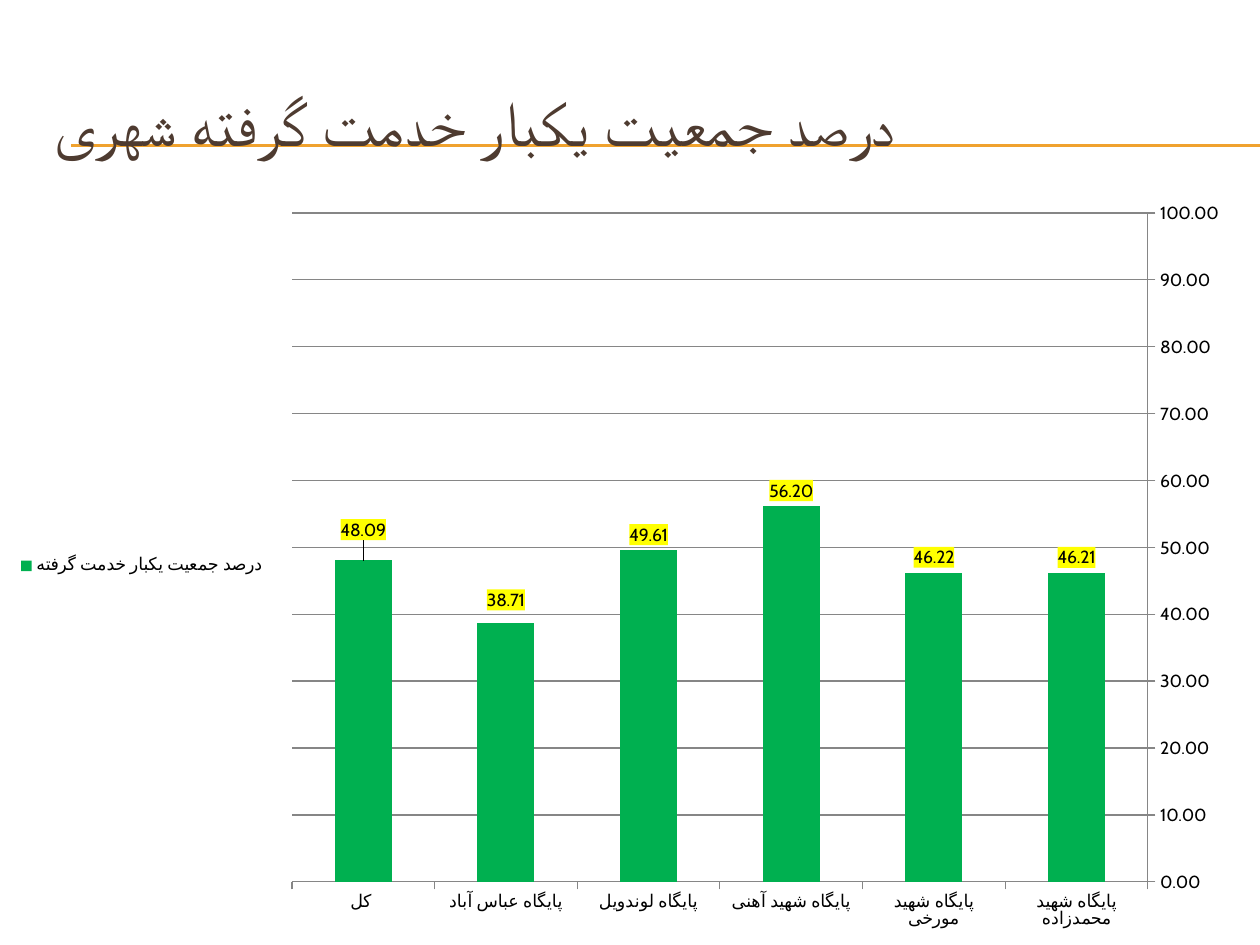
from lxml import etree
from pptx import Presentation
from pptx import util as u
from pptx.chart.data import CategoryChartData
from pptx.dml.color import RGBColor
from pptx.enum import chart as charts, shapes, text
from pptx.oxml import parse_xml
from pptx.oxml.ns import nsdecls, qn

PX = 914400 // 126
FONT = "Cabin"
TITLE = "درصد جمعیت یکبار خدمت گرفته شهری"
SERIES = "درصد جمعیت یکبار خدمت گرفته"
VALUES = [
    ("پایگاه شهید محمدزاده", 46.21),
    ("پایگاه شهید مورخی", 46.22),
    ("پایگاه شهید آهنی", 56.20),
    ("پایگاه لوندویل", 49.61),
    ("پایگاه عباس آباد", 38.71),
    ("کل ", 48.09),
]
RAISED_LABELS = {4: -0.01, 5: -0.02}  # point index: share of chart height
TITLE_BOX = (42, 63, 1197, 116)
CHART_BOX = (5, 188, 1239, 756)
PLOT_BOX = (292, 213, 856, 669)
RULES_Y = (145, 146)
RULE_LEFT, PAGE_WIDTH, PAGE_HEIGHT = 71, 1260, 945


def px(*lengths):
    return [u.Emu(length * PX) for length in lengths]


def color(value):
    return RGBColor.from_string(value)


def manual_layout(**settings):
    parts = "".join(f'<c:{name} val="{value}"/>' for name, value in settings.items())
    return parse_xml(f'<c:layout {nsdecls("c")}><c:manualLayout>{parts}</c:manualLayout></c:layout>')


def style_font(font, size, value):
    font.name, font.size, font.bold = FONT, u.Pt(size), False
    font.color.rgb = color(value)


def add_rule(page, y):
    left, top, right = px(RULE_LEFT, y, PAGE_WIDTH)
    rule = page.shapes.add_connector(shapes.MSO_CONNECTOR.STRAIGHT, left, top, right, top)
    rule.line.color.rgb, rule.line.width = color("F0A22E"), u.Pt(0.75)
    etree.SubElement(rule._element.spPr, qn("a:effectLst"))


def set_title(page):
    box = page.shapes.title
    box.left, box.top, box.width, box.height = px(*TITLE_BOX)
    frame = box.text_frame
    frame.text = TITLE
    frame.word_wrap, frame.vertical_anchor = True, text.MSO_ANCHOR.MIDDLE
    para = frame.paragraphs[0]
    para.alignment = text.PP_ALIGN.LEFT
    style_font(para.runs[0].font, 36, "4E3B30")
    tree = page.shapes._spTree
    tree.remove(box._element)
    tree.append(box._element)  # the title lies over the rules


def place_plot(chart):
    left, top, width, height = CHART_BOX
    x, y, w, h = PLOT_BOX
    area = chart._chartSpace.chart.plotArea
    for old in area.findall(qn("c:layout")):
        area.remove(old)
    area.insert(0, manual_layout(
        layoutTarget="inner", xMode="edge", yMode="edge",
        x=round((x - left) / width, 4), y=round((y - top) / height, 4),
        w=round(w / width, 4), h=round(h / height, 4)))


def label_bars(series):
    labels = series.data_labels
    labels.show_value = True
    point_labels = [series.points[index].data_label for index in RAISED_LABELS]
    for label in [labels, *point_labels]:
        style_font(label.font, 10, "000000")
        label.position = charts.XL_LABEL_POSITION.OUTSIDE_END
    for holder in series._element.xpath(".//c:dLbls | .//c:dLbl"):
        body = holder.find(qn("c:txPr"))
        body.addprevious(parse_xml(f'<c:numFmt {nsdecls("c")} formatCode="0.00" sourceLinked="0"/>'))
        body.addprevious(parse_xml(
            f'<c:spPr {nsdecls("c", "a")}><a:solidFill><a:srgbClr val="FFFF00"/></a:solidFill></c:spPr>'))
        index = holder.find(qn("c:idx"))
        if index is not None:
            index.addnext(manual_layout(x=0, y=RAISED_LABELS[int(index.get("val"))]))


def add_bar_chart(page):
    data = CategoryChartData(number_format="0.00")
    data.categories = [name for name, _ in VALUES]
    data.add_series(SERIES, [value for _, value in VALUES])
    chart = page.shapes.add_chart(
        charts.XL_CHART_TYPE.COLUMN_CLUSTERED, *px(*CHART_BOX), data).chart
    style_font(chart.font, 10, "000000")
    chart.has_title = False
    chart.has_legend = True
    chart.legend.position = charts.XL_LEGEND_POSITION.LEFT
    chart.legend.include_in_layout = False

    category, value = chart.category_axis, chart.value_axis
    category.reverse_order = True
    value.minimum_scale, value.maximum_scale, value.major_unit = 0, 100, 10
    value.has_major_gridlines = True
    value.tick_labels.number_format = "0.00"
    value.tick_labels.number_format_is_linked = False
    for axis in (category, value):
        axis.major_tick_mark = charts.XL_TICK_MARK.OUTSIDE
    for line in (category.format.line, value.format.line, value.major_gridlines.format.line):
        line.color.rgb, line.width = color("868686"), u.Pt(0.75)

    plot = chart.plots[0]
    plot.gap_width, plot.vary_by_categories = 150, False
    series = plot.series[0]
    series.format.fill.solid()
    series.format.fill.fore_color.rgb = color("00B050")
    label_bars(series)
    place_plot(chart)


def main():
    deck = Presentation()
    deck.slide_width, deck.slide_height = px(PAGE_WIDTH, PAGE_HEIGHT)
    page = deck.slides.add_slide(deck.slide_layouts[5])
    for y in RULES_Y:
        add_rule(page, y)
    set_title(page)
    add_bar_chart(page)
    deck.save("out.pptx")


if __name__ == "__main__":
    main()
